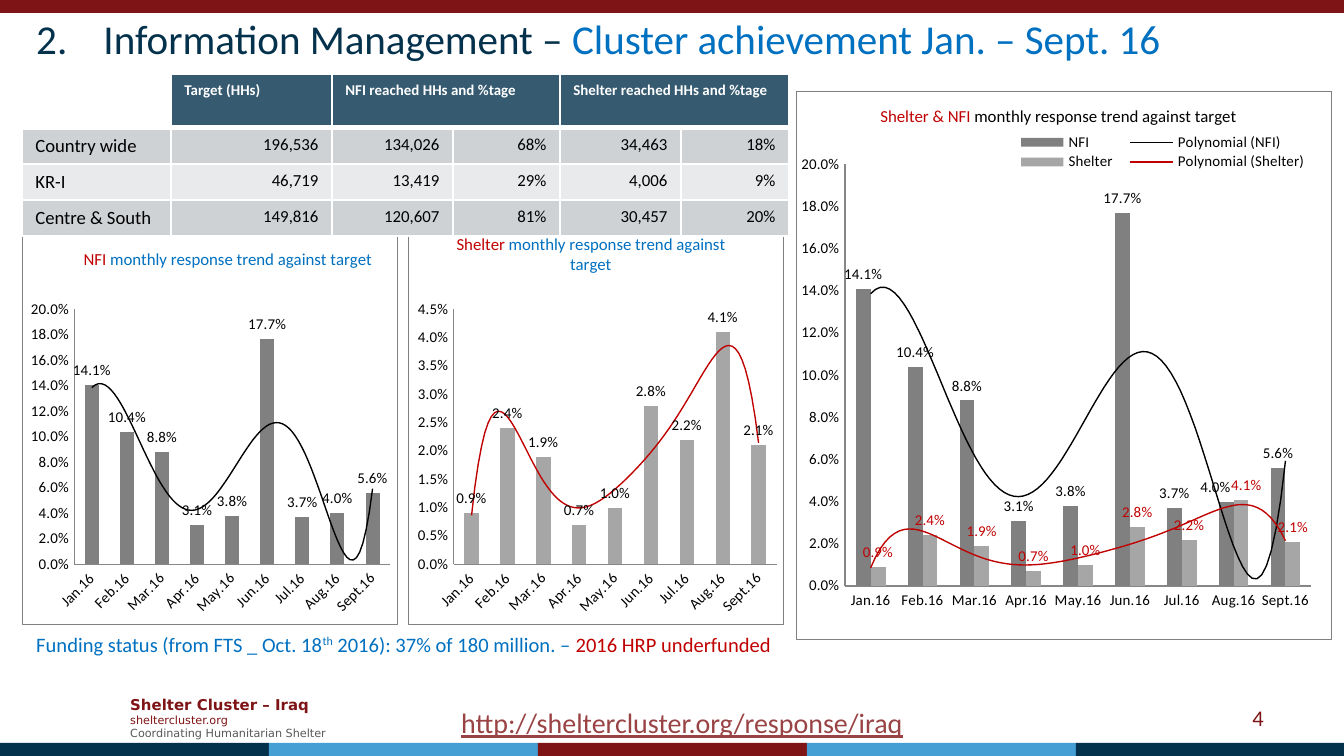
from dataclasses import dataclass
from typing import Optional

from pptx import Presentation
from pptx.chart.data import CategoryChartData
from pptx.dml.color import RGBColor
from pptx.enum.chart import XL_CHART_TYPE as ChartType
from pptx.enum.chart import XL_LABEL_POSITION as LabelPos
from pptx.enum.chart import XL_LEGEND_POSITION as LegendPos
from pptx.enum.chart import XL_TICK_MARK as Tick
from pptx.enum.shapes import MSO_SHAPE as Preset
from pptx.enum.text import MSO_ANCHOR as Anchor
from pptx.enum.text import PP_ALIGN as Align
from pptx.oxml import parse_xml
from pptx.oxml.ns import nsdecls, qn
from pptx.util import Pt

NAVY, SKY, MAROON = "04314C", "459FD5", "7F1416"
BLUE, RED, BLACK, WHITE = "0070C0", "C00000", "000000", "FFFFFF"
DARK_GREY, LIGHT_GREY, AXIS_GREY = "808080", "A6A6A6", "868686"
PERCENT = "0.0%"
MONTHS = ["Jan.16", "Feb.16", "Mar.16", "Apr.16", "May.16", "Jun.16", "Jul.16", "Aug.16", "Sept.16"]
AUGUST = MONTHS.index("Aug.16")
NFI = (0.141, 0.104, 0.088, 0.031, 0.038, 0.177, 0.037, 0.04, 0.056)
SHELTER = (0.009, 0.024, 0.019, 0.007, 0.01, 0.028, 0.022, 0.041, 0.021)


@dataclass
class Box:
    x: int
    y: int
    w: int
    h: int

    def emu(self) -> tuple:
        return px(self.x), px(self.y), px(self.w), px(self.h)


@dataclass
class Run:
    text: str
    color: str
    size: float
    bold: bool = False
    underline: bool = False
    raised: bool = False


@dataclass
class Response:
    name: str
    values: tuple
    fill: str
    trend: str
    label: str = BLACK
    august_shift: Optional[float] = None


@dataclass
class Trend:
    box: Box
    plot: Box
    title: list
    responses: list
    top: float
    step: float
    slant: int
    title_at: Optional[tuple] = None
    legend: Optional[Box] = None


def px(n: int) -> int:
    return round(n * 9144000 / 1344)


def rgb(value: str) -> RGBColor:
    return RGBColor.from_string(value)


def write(frame, *lines: list, align=None, anchor=None) -> None:
    if anchor is not None:
        frame.vertical_anchor = anchor
    for i, line in enumerate(lines):
        para = frame.paragraphs[0] if i == 0 else frame.add_paragraph()
        if align is not None:
            para.alignment = align
        for part in line:
            run = para.add_run()
            run.text = part.text
            font = run.font
            font.name, font.size, font.bold = "Calibri", Pt(part.size), part.bold
            font.color.rgb = rgb(part.color)
            if part.underline:
                font.underline = True
            if part.raised:
                run._r.get_or_add_rPr().set("baseline", "30000")


def add_text(slide, box: Box, *lines: list, **layout):
    frame = slide.shapes.add_textbox(*box.emu()).text_frame
    frame.word_wrap = True
    write(frame, *lines, **layout)
    return frame


def add_band(slide, box: Box, color: str) -> None:
    band = slide.shapes.add_shape(Preset.RECTANGLE, *box.emu())
    band.shadow.inherit = False
    band.fill.solid()
    band.fill.fore_color.rgb = rgb(color)
    band.line.fill.background()


def place(parent, index: int, inner: bool = False, **offsets: float) -> None:
    for old in parent.findall(qn("c:layout")):
        parent.remove(old)
    target = '<c:layoutTarget val="inner"/>' if inner else ""
    modes = "".join(f'<c:{k}Mode val="edge"/>' for k in offsets if k in "xy" and parent.tag != qn("c:dLbl"))
    sizes = "".join(f'<c:{k} val="{v:.3f}"/>' for k, v in offsets.items())
    parent.insert(index, parse_xml(
        f'<c:layout {nsdecls("c")}><c:manualLayout>{target}{modes}{sizes}</c:manualLayout></c:layout>'))


def within(part: Box, whole: Box) -> dict:
    return dict(x=(part.x - whole.x) / whole.w, y=(part.y - whole.y) / whole.h,
                w=part.w / whole.w, h=part.h / whole.h)


def outline(color: str) -> str:
    return (f'<c:spPr {nsdecls("c", "a")}><a:ln w="9525"><a:solidFill>'
            f'<a:srgbClr val="{color}"/></a:solidFill></a:ln></c:spPr>')


def style_response(series, response: Response) -> None:
    series.format.fill.solid()
    series.format.fill.fore_color.rgb = rgb(response.fill)
    labels = series.data_labels
    labels.show_value, labels.position = True, LabelPos.OUTSIDE_END
    labels.number_format, labels.number_format_is_linked = PERCENT, False
    labels.font.size, labels.font.color.rgb = Pt(8), rgb(response.label)
    if response.august_shift is not None:
        august = series.points[AUGUST].data_label
        august.position = LabelPos.OUTSIDE_END
        august.font.size, august.font.color.rgb = Pt(8), rgb(response.label)
        label = series._element.find(".//" + qn("c:dLbl"))
        place(label, 1, x=response.august_shift, y=0)
        label.insert(2, parse_xml(f'<c:numFmt {nsdecls("c")} formatCode="{PERCENT}" sourceLinked="0"/>'))
    series._element.find(qn("c:cat")).addprevious(parse_xml(
        f'<c:trendline {nsdecls("c")}>{outline(response.trend)}<c:trendlineType val="poly"/>'
        '<c:order val="6"/><c:dispRSqr val="0"/><c:dispEq val="0"/></c:trendline>'))


def add_trend(slide, trend: Trend) -> None:
    data = CategoryChartData(number_format=PERCENT)
    data.categories = MONTHS
    for response in trend.responses:
        data.add_series(response.name, response.values)
    chart = slide.shapes.add_chart(ChartType.COLUMN_CLUSTERED, *trend.box.emu(), data).chart
    chart.font.name, chart.font.size, chart.font.color.rgb = "Calibri", Pt(8), rgb(BLACK)
    plot = chart.plots[0]
    plot.gap_width, plot.overlap, plot.vary_by_categories = 150, 0, False
    for series, response in zip(plot.series, trend.responses):
        style_response(series, response)

    months, share = chart.category_axis, chart.value_axis
    for axis in (months, share):
        axis.major_tick_mark = axis.minor_tick_mark = Tick.NONE
        axis.has_major_gridlines = False
        axis.format.line.color.rgb = rgb(AXIS_GREY)
        axis.tick_labels.font.size = Pt(8)
    share.minimum_scale, share.maximum_scale, share.major_unit = 0, trend.top, trend.step
    share.tick_labels.number_format, share.tick_labels.number_format_is_linked = PERCENT, False
    months._element.find(qn("c:txPr")).find(qn("a:bodyPr")).set("rot", str(trend.slant * 60000))

    write(chart.chart_title.text_frame, trend.title)
    chart.chart_title.include_in_layout = False
    space = chart.element.find(qn("c:chart"))
    if trend.title_at:
        x, y = trend.title_at
        place(space.find(qn("c:title")), 1, x=(x - trend.box.x) / trend.box.w, y=(y - trend.box.y) / trend.box.h)
    place(space.find(qn("c:plotArea")), 0, inner=True, **within(trend.plot, trend.box))
    chart.has_legend = trend.legend is not None
    if trend.legend:
        chart.legend.position, chart.legend.include_in_layout = LegendPos.RIGHT, False
        chart.legend.font.size = Pt(8)
        place(space.find(qn("c:legend")), 1, **within(trend.legend, trend.box))
    space.addnext(parse_xml(outline(DARK_GREY)))


def style_cell(cell, fill: Optional[str], bottom: int) -> None:
    if fill:
        cell.fill.solid()
        cell.fill.fore_color.rgb = rgb(fill)
    else:
        cell.fill.background()
    edges = cell._tc.get_or_add_tcPr()
    for i, (side, width) in enumerate((("L", 1), ("R", 1), ("T", 1), ("B", bottom))):
        edges.insert(i, parse_xml(f'<a:ln{side} {nsdecls("a")} w="{width * 12700}"><a:solidFill>'
                                  f'<a:srgbClr val="{WHITE}"/></a:solidFill></a:ln{side}>'))


def add_reach_table(slide, box: Box, columns: list, heights: list, rows: list) -> None:
    table = slide.shapes.add_table(len(rows), len(columns), *box.emu()).table
    for column, width in zip(table.columns, columns):
        column.width = px(width)
    for row, height in zip(table.rows, heights):
        row.height = px(height)
    for r, row in enumerate(rows):
        for c, text in enumerate(row):
            cell = table.cell(r, c)
            fill = ("365A70" if c else None) if r == 0 else ("CED2D5" if r % 2 else "E8EAEB")
            style_cell(cell, fill, 1 if r else 3)
            if text and r == 0:
                write(cell.text_frame, [Run(text, WHITE, 8, bold=True)])
            elif text:
                write(cell.text_frame, [Run(text, BLACK, 9 if c else 10)], align=Align.RIGHT if c else None)
    for c in (2, 4):
        table.cell(0, c).merge(table.cell(0, c + 1))


def main() -> None:
    deck = Presentation()
    deck.slide_width, deck.slide_height = px(1344), px(756)
    slide = deck.slides.add_slide(deck.slide_layouts[6])

    add_text(slide, Box(117, 688, 233, 59), [Run("Shelter Cluster – Iraq", MAROON, 8, bold=True)],
             [Run("sheltercluster.org", MAROON, 6)], [Run("Coordinating Humanitarian Shelter", "595959", 6)],
             anchor=Anchor.MIDDLE)
    for para in slide.shapes[0].text_frame.paragraphs:
        para.runs[0].font.name = "DejaVu Sans"
    add_band(slide, Box(0, 0, 1344, 13), MAROON)
    for i, color in enumerate((NAVY, SKY, MAROON, SKY, NAVY)):
        add_band(slide, Box(i * 269, 743, 269, 13), color)
    add_text(slide, Box(964, 698, 313, 40), [Run("4", MAROON, 12)], align=Align.RIGHT, anchor=Anchor.MIDDLE)
    add_text(slide, Box(448, 699, 891, 47),
             [Run("http://sheltercluster.org/response/iraq", "994345", 15, underline=True)])

    heading = add_text(slide, Box(23, 11, 1309, 54), [Run("Information Management – ", NAVY, 22),
                       Run("Cluster achievement Jan. – Sept. 16", BLUE, 22)], anchor=Anchor.MIDDLE)
    numbering = heading.paragraphs[0]._p.get_or_add_pPr()
    numbering.set("marL", "457200")
    numbering.set("indent", "-457200")
    numbering.append(parse_xml(f'<a:buAutoNum {nsdecls("a")} type="arabicPeriod" startAt="2"/>'))

    rest = "monthly response trend against target"
    add_trend(slide, Trend(Box(22, 222, 376, 403), Box(74, 309, 317, 256),
                           [Run("NFI ", RED, 9), Run(rest, BLUE, 9)],
                           [Response("Series 1", NFI, DARK_GREY, BLACK)], 0.2, 0.02, -45, (79, 243)))
    add_trend(slide, Trend(Box(408, 222, 376, 403), Box(453, 309, 324, 256),
                           [Run("Shelter ", RED, 9), Run(rest, BLUE, 9)],
                           [Response("Series 1", SHELTER, LIGHT_GREY, RED)], 0.045, 0.005, -45, (452, 228)))
    add_trend(slide, Trend(Box(796, 91, 536, 549), Box(844, 164, 468, 423),
                           [Run("Shelter & NFI ", RED, 9), Run(rest, BLACK, 9)],
                           [Response("NFI", NFI, DARK_GREY, BLACK, august_shift=-0.02),
                            Response("Shelter", SHELTER, LIGHT_GREY, RED, RED, august_shift=0.01)],
                           0.2, 0.02, 0, (876, 100), Box(1008, 131, 310, 41)))

    add_reach_table(slide, Box(22, 74, 767, 138), [149, 161, 121, 107, 121, 108], [30, 36, 36, 36], [
        ("", "Target (HHs)", "NFI reached HHs and %tage", "", "Shelter reached HHs and %tage", ""),
        ("Country wide", "196,536", "134,026", "68%", "34,463", "18%"),
        ("KR-I", "46,719", "13,419", "29%", "4,006", "9%"),
        ("Centre & South", "149,816", "120,607", "81%", "30,457", "20%")])
    add_text(slide, Box(23, 625, 762, 39), [
        Run("Funding status (from FTS _ Oct. 18", BLUE, 11), Run("th", BLUE, 11, raised=True),
        Run(" 2016): 37% of 180 million. – ", BLUE, 11), Run("2016 HRP underfunded", RED, 11)])
    deck.save("out.pptx")


if __name__ == "__main__":
    main()
